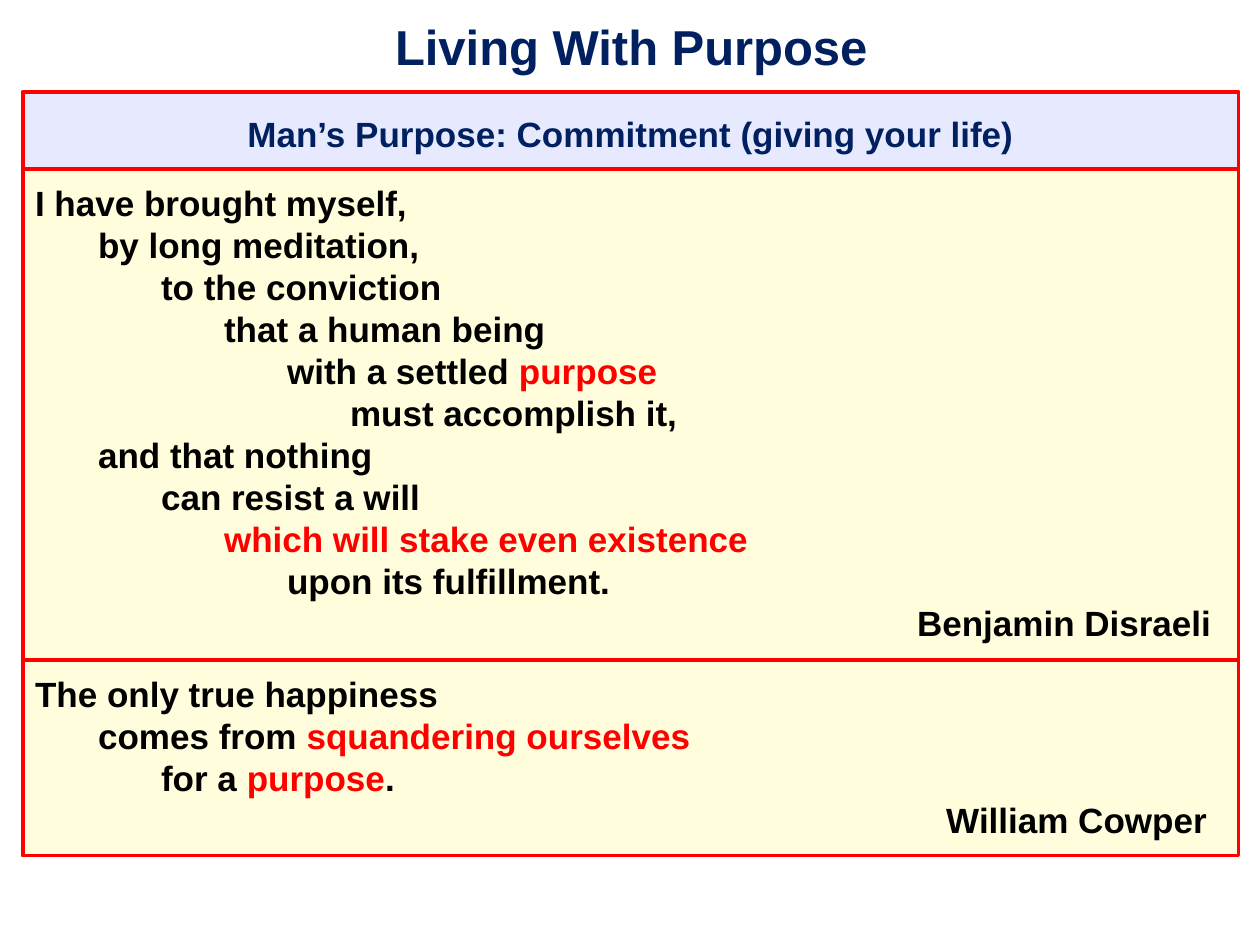
from lxml import etree
from pptx import Presentation
from pptx.dml.color import RGBColor
from pptx.enum import shapes, text
from pptx.oxml.ns import qn
from pptx.util import Pt

NAVY = RGBColor(0x00, 0x20, 0x60)
RED = RGBColor(0xFF, 0x00, 0x00)
BLACK = RGBColor(0x00, 0x00, 0x00)
LILAC = RGBColor(0xD0, 0xD6, 0xFF)
CREAM = RGBColor(0xFF, 0xFD, 0xB8)

INDENT = 36
LEFT, WIDTH = 12.96, 694.8

DISRAELI = [
    (0, ["I have brought myself,"]),
    (1, ["by long meditation,"]),
    (2, ["to the conviction"]),
    (3, ["that a human being"]),
    (4, ["with a settled ", "purpose"]),
    (5, ["must accomplish it,"]),
    (1, ["and that nothing"]),
    (2, ["can resist a will"]),
    (3, ["", "which will stake even existence"]),
    (4, ["upon its fulfillment."]),
]
COWPER = [
    (0, ["The only true happiness"]),
    (1, ["comes from ", "squandering ourselves"]),
    (2, ["for a ", "purpose", "."]),
]


def style(font, size, color):
    font.name, font.size, font.bold = "Arial", Pt(size), True
    font.color.rgb = color


def add_title(s, box, title):
    sp = s.shapes.title
    sp.left, sp.top, sp.width, sp.height = map(Pt, box)
    tf = sp.text_frame
    tf.text = title
    tf.auto_size = text.MSO_AUTO_SIZE.NONE
    tf.vertical_anchor = text.MSO_ANCHOR.MIDDLE
    tf.margin_left = tf.margin_top = tf.margin_bottom = Pt(4.5)
    tf.margin_right = Pt(10)
    p = tf.paragraphs[0]
    p.alignment = text.PP_ALIGN.CENTER
    p._p.get_or_add_pPr().set("marL", str(Pt(3)))
    style(p.runs[0].font, 28, NAVY)


def add_panel(s, box, color):
    sp = s.shapes.add_shape(shapes.MSO_SHAPE.RECTANGLE, *map(Pt, box))
    sp.shadow.inherit = False
    sp.fill.solid()
    sp.fill.fore_color.rgb = color
    clr = sp._element.spPr.find(qn("a:solidFill"))[0]
    etree.SubElement(clr, qn("a:alpha")).set("val", "50000")
    sp.line.color.rgb = RED
    sp.line.width = Pt(2.25)
    tf = sp.text_frame
    tf.word_wrap = True
    tf.auto_size = text.MSO_AUTO_SIZE.SHAPE_TO_FIT_TEXT
    tf.vertical_anchor = text.MSO_ANCHOR.TOP
    tf.margin_left = tf.margin_right = Pt(7.2)
    tf.margin_top = tf.margin_bottom = Pt(7.2)
    return tf


def add_heading(s, box, heading):
    tf = add_panel(s, box, LILAC)
    tf.text = heading
    p = tf.paragraphs[0]
    p.alignment = text.PP_ALIGN.CENTER
    p.line_spacing = 1.2
    style(p.runs[0].font, 20, NAVY)


def add_quote(s, box, lines, author, author_gap):
    tf = add_panel(s, box, CREAM)
    for i, (level, parts) in enumerate(lines):
        p = tf.paragraphs[0] if i == 0 else tf.add_paragraph()
        p.alignment = text.PP_ALIGN.LEFT
        p._p.get_or_add_pPr().set("marL", str(Pt(level * INDENT)))
        for j, part in enumerate(parts):
            if part:
                r = p.add_run()
                r.text = part
                style(r.font, 20, RED if j % 2 else BLACK)
    p = tf.add_paragraph()
    p.text = author
    p.alignment = text.PP_ALIGN.RIGHT
    p._p.get_or_add_pPr().set("marR", str(Pt(author_gap)))
    style(p.runs[0].font, 20, BLACK)


def main():
    prs = Presentation()
    prs.slide_width, prs.slide_height = Pt(720), Pt(540)
    s = prs.slides.add_slide(prs.slide_layouts[5])
    add_title(s, (10, 1.5, 704, 49.5), "Living With Purpose")
    add_heading(s, (LEFT, 52.5, WIDTH, 44),
                "Man’s Purpose: Commitment (giving your life)")
    add_quote(s, (LEFT, 96.5, WIDTH, 280.8), DISRAELI, "Benjamin Disraeli", 8.5)
    add_quote(s, (LEFT, 377.3, WIDTH, 111.6), COWPER, "William Cowper", 11)
    prs.save("out.pptx")


if __name__ == "__main__":
    main()
